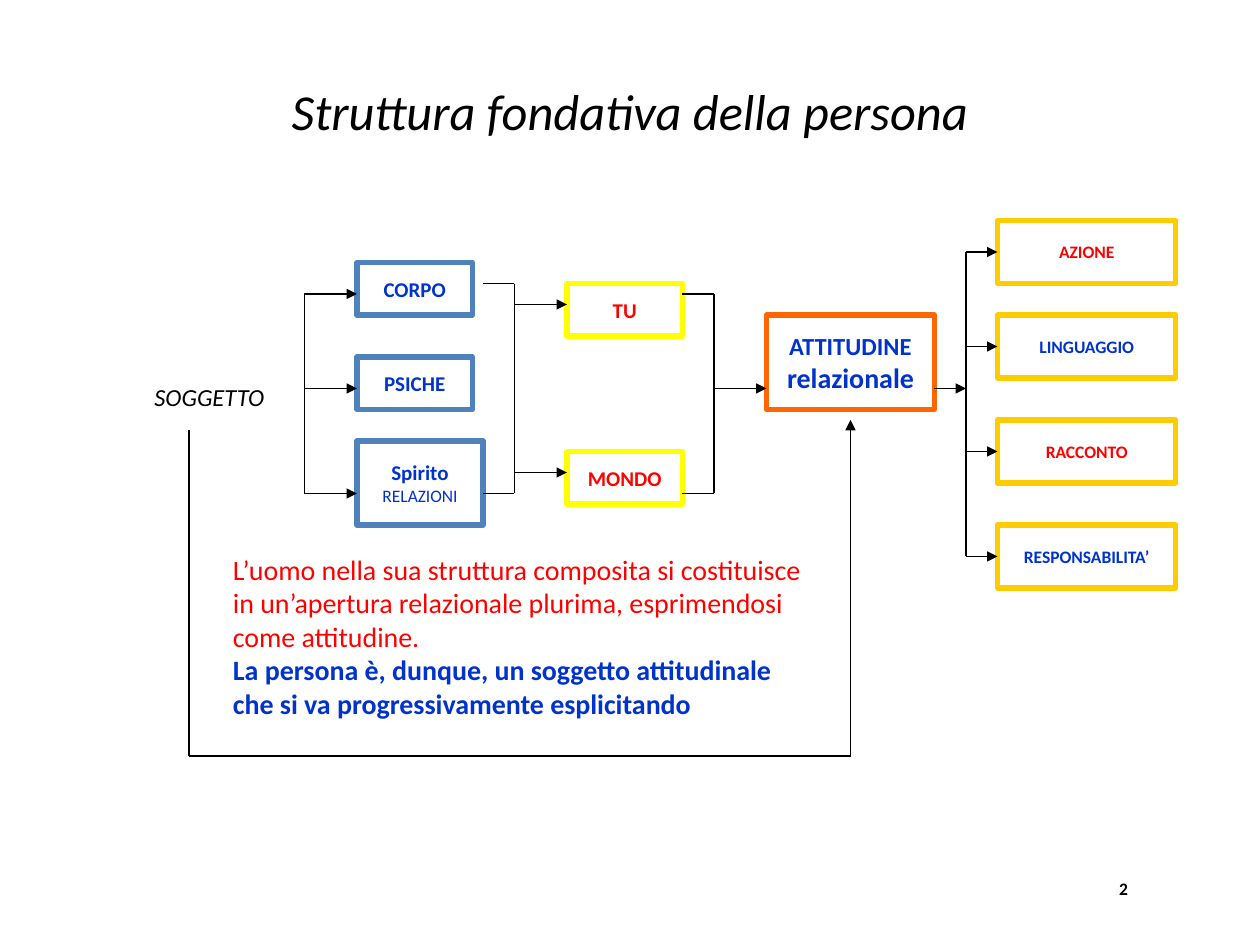
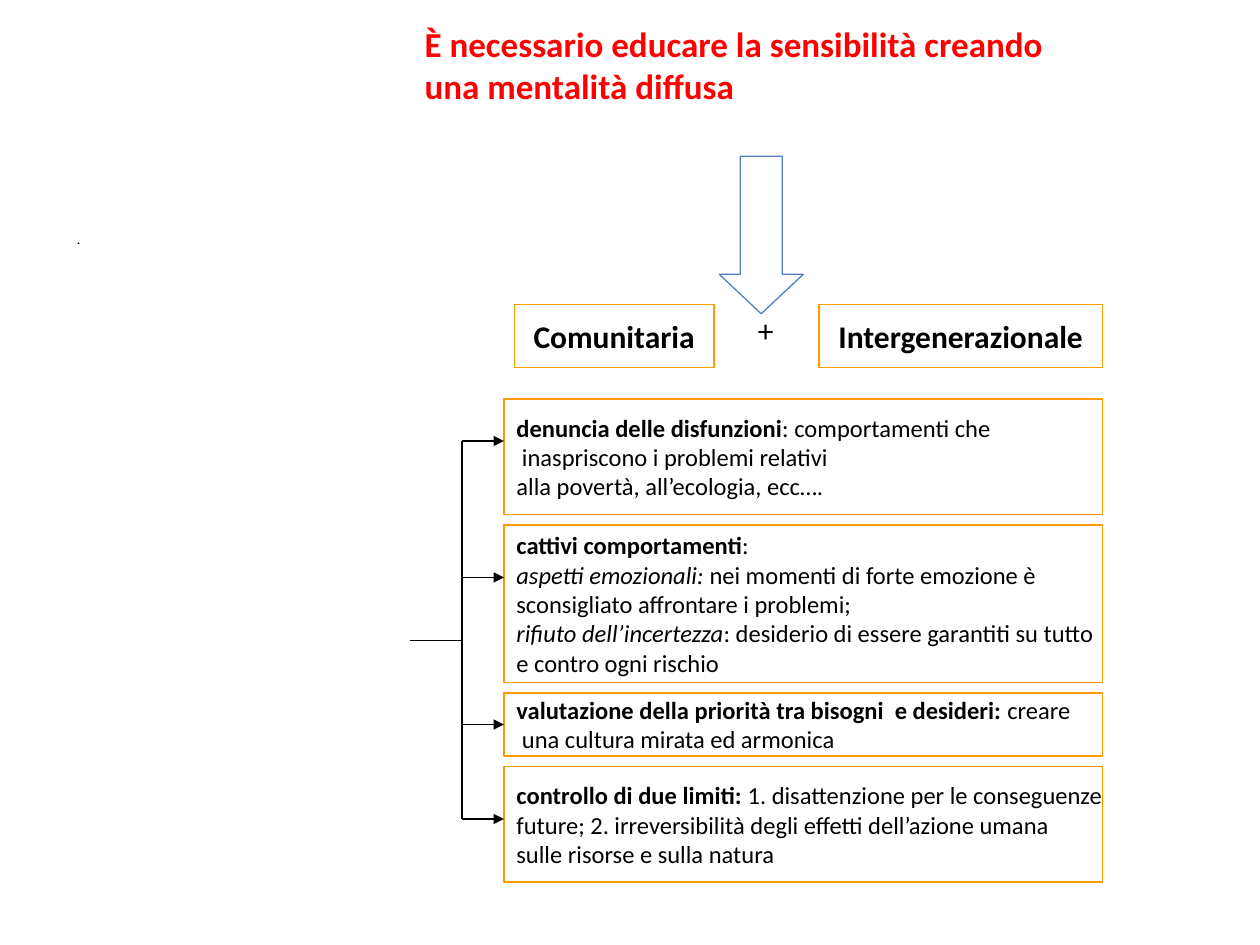
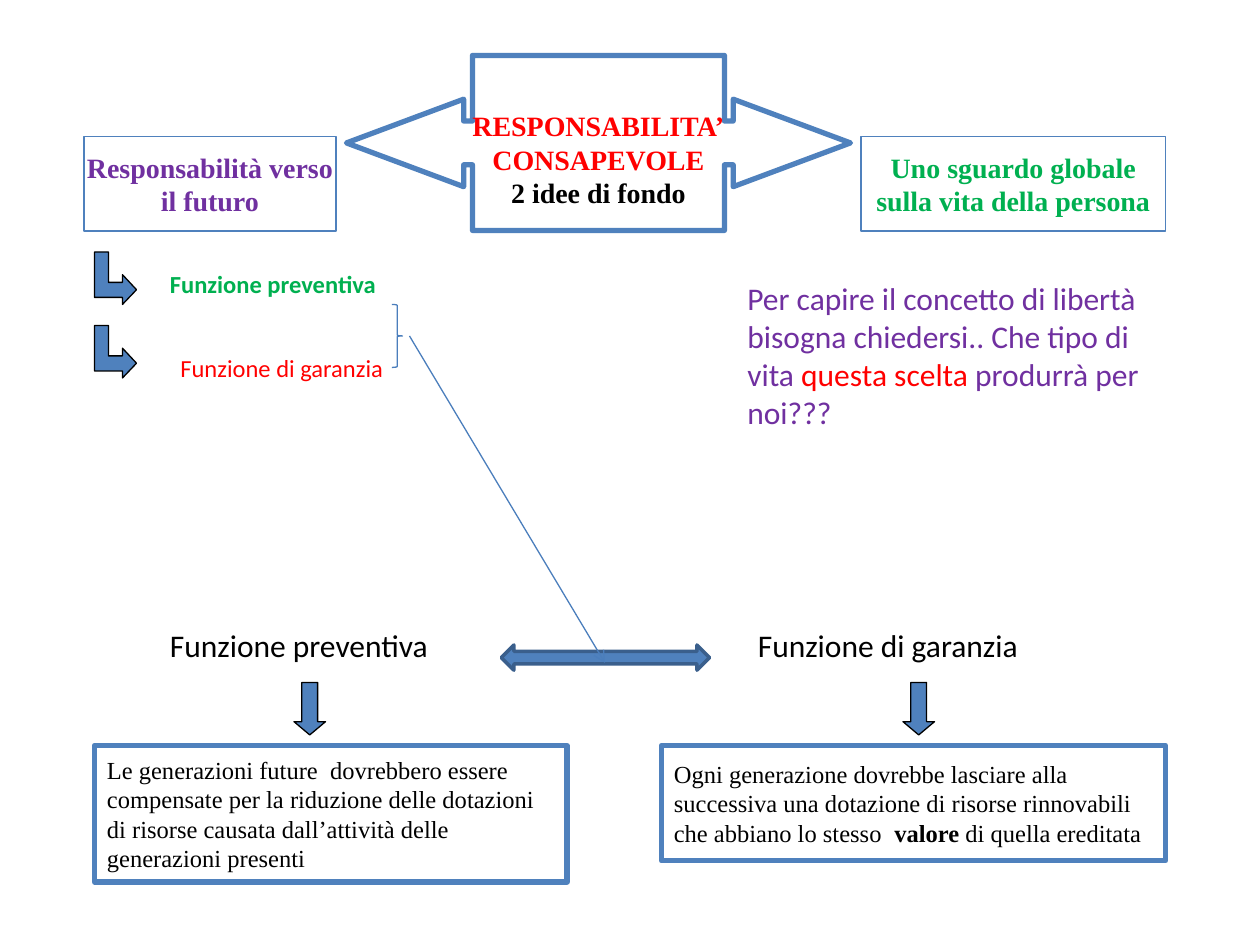
from dataclasses import dataclass, replace
from typing import NamedTuple, Optional

from lxml import etree
from pptx import Presentation
from pptx.dml import color as dml
from pptx.enum import shapes, text
from pptx.oxml import ns
from pptx.util import Pt

BLACK, WHITE, RED = "000000", "FFFFFF", "FF0000"
BLUE, STEEL, STEEL_LINE, STEEL_DARK = "0033CC", "4F81BD", "4B7EBC", "3A5F8C"
YELLOW, GOLD, AMBER, ORANGE = "FFFF00", "FFCC00", "FF9900", "FF6600"
PURPLE, GREEN = "7030A0", "00B050"
SERIF = "Times New Roman"
THIN, THICK = 0.75, 3
LEFT, CENTER = text.PP_ALIGN.LEFT, text.PP_ALIGN.CENTER
PRESET = shapes.MSO_SHAPE


class Area(NamedTuple):
    left: float
    top: float
    width: float
    height: float


class Point(NamedTuple):
    x: float
    y: float


@dataclass(frozen=True)
class Style:
    size: float = 14
    color: str = BLACK
    bold: bool = False
    italic: bool = False
    name: str = "Calibri"


class Span(NamedTuple):
    text: str
    style: Style


@dataclass(frozen=True)
class Box:
    area: Area
    paragraphs: tuple = ()
    line: str = STEEL
    width: float = THIN
    fill: Optional[str] = None
    align: int = CENTER
    preset: int = PRESET.RECTANGLE
    adjustments: tuple = ()
    margin_top: float = 3.6


NORMAL = Style()
BOLD = Style(bold=True)
ITALIC = Style(italic=True)


def rgb(value: str) -> dml.RGBColor:
    return dml.RGBColor.from_string(value)


def points(values) -> list:
    return [Pt(value) for value in values]


def lines(style: Style, *texts: str) -> tuple:
    return tuple((Span(line, style),) for line in texts)


def set_font(font, style: Style) -> None:
    font.name, font.size = style.name, Pt(style.size)
    font.bold, font.italic = style.bold, style.italic
    font.color.rgb = rgb(style.color)


def write(frame, paragraphs: tuple, align=LEFT) -> None:
    for index, spans in enumerate(paragraphs):
        paragraph = frame.add_paragraph() if index else frame.paragraphs[0]
        paragraph.alignment = align
        paragraph.space_before = Pt(0)
        for span in spans:
            run = paragraph.add_run()
            run.text = span.text
            if len(spans) > 1:
                set_font(run.font, span.style)
        if len(spans) == 1:
            set_font(paragraph.font, spans[0].style)


def fill_placeholder(placeholder, area: Area, paragraphs: tuple, align=LEFT,
                     anchor=text.MSO_ANCHOR.TOP) -> None:
    (placeholder.left, placeholder.top,
     placeholder.width, placeholder.height) = points(area)
    frame = placeholder.text_frame
    frame.word_wrap = True
    frame.auto_size = text.MSO_AUTO_SIZE.NONE
    frame.vertical_anchor = anchor
    write(frame, paragraphs, align)


def fill_body(placeholder, area: Area, paragraphs: tuple) -> None:
    fill_placeholder(placeholder, area, paragraphs)
    for paragraph in placeholder.text_frame.paragraphs:
        properties = paragraph._p.get_or_add_pPr()
        properties.set("marL", "0")
        properties.set("indent", "0")
        bullet = etree.Element(ns.qn("a:buNone"))
        default_font = properties.find(ns.qn("a:defRPr"))
        if default_font is None:
            properties.append(bullet)
        else:
            default_font.addprevious(bullet)


def add_text(slide, area: Area, paragraphs: tuple, align=LEFT) -> None:
    frame = slide.shapes.add_textbox(*points(area)).text_frame
    frame.word_wrap = True
    frame.auto_size = text.MSO_AUTO_SIZE.SHAPE_TO_FIT_TEXT
    write(frame, paragraphs, align)


def paint(shape, fill: Optional[str], line: str, width: float) -> None:
    shape.shadow.inherit = False
    if fill:
        shape.fill.solid()
        shape.fill.fore_color.rgb = rgb(fill)
    else:
        shape.fill.background()
    shape.line.color.rgb = rgb(line)
    shape.line.width = Pt(width)


def add_box(slide, box: Box):
    shape = slide.shapes.add_shape(box.preset, *points(box.area))
    for index, value in enumerate(box.adjustments):
        shape.adjustments[index] = value
    paint(shape, box.fill, box.line, box.width)
    if box.paragraphs:
        frame = shape.text_frame
        frame.word_wrap = False
        frame.vertical_anchor = text.MSO_ANCHOR.MIDDLE
        frame.margin_top = Pt(box.margin_top)
        write(frame, box.paragraphs, box.align)
    return shape


def add_line(slide, start: Point, end: Point, head: Optional[str] = None,
             color: str = BLACK):
    connector = slide.shapes.add_connector(
        shapes.MSO_CONNECTOR.STRAIGHT, *points(start + end))
    connector.line.color.rgb = rgb(color)
    connector.line.width = Pt(THIN)
    properties = connector._element.spPr
    if head:
        outline = properties.find(ns.qn("a:ln"))
        etree.SubElement(outline, ns.qn("a:tailEnd"), type=head)
    etree.SubElement(properties, ns.qn("a:effectLst"))
    return connector


def add_path(slide, corners: list, head: Optional[str] = None) -> None:
    last = len(corners) - 2
    for index, (start, end) in enumerate(zip(corners, corners[1:])):
        add_line(slide, Point(*start), Point(*end), head if index == last else None)


def add_arrows(slide, start_x: float, end_x: float, heights: list, targets: list) -> None:
    for y, target in zip(heights, targets):
        arrow = add_line(slide, Point(start_x, y), Point(end_x, y), "triangle")
        if target.top + target.height // 2 == Pt(y):
            arrow.end_connect(target, 1)


def add_branch(slide, trunk_x: float, end_x: float, heights: list, targets: list) -> None:
    add_line(slide, Point(trunk_x, heights[0]), Point(trunk_x, heights[-1]))
    add_arrows(slide, trunk_x, end_x, heights, targets)


def add_bent_arrow(slide, left: float, top: float) -> None:
    outline = [(24, 21.6), (16, 13), (16, 17.4), (8, 17.4), (8, 0),
               (0, 0), (0, 26), (16, 26), (16, 30)]
    corners = [(Pt(left + x), Pt(top + y)) for x, y in outline]
    builder = slide.shapes.build_freeform(*corners[0], scale=1.0)
    builder.add_line_segments(corners[1:], close=True)
    paint(builder.convert_to_shape(), STEEL, BLACK, THIN)


def build_structure(presentation) -> None:
    slide = presentation.slides.add_slide(presentation.slide_layouts[1])
    fill_placeholder(slide.shapes.title, Area(54, 48, 612, 30),
                     lines(Style(28.8, italic=True), "Struttura fondativa della persona"),
                     CENTER, text.MSO_ANCHOR.MIDDLE)
    body = slide.placeholders[1]
    fill_body(body, Area(54, 114, 636, 366), lines(ITALIC, "SOGGETTO"))
    body.text_frame.margin_left = Pt(34.2)
    body.text_frame.margin_top = Pt(104.5)

    blue = Style(12, BLUE, True)
    red = replace(blue, color=RED)
    spirit = lines(blue, "Spirito") + lines(Style(10, BLUE), "RELAZIONI")
    subject_parts = [
        add_box(slide, Box(area, content, STEEL, THICK, WHITE))
        for area, content in (
            (Area(204, 150, 66, 30), lines(blue, "CORPO")),
            (Area(204, 204, 66, 30), lines(blue, "PSICHE")),
            (Area(204, 252, 72, 48), spirit),
        )
    ]
    others = [
        add_box(slide, Box(Area(324, top, 66, 30), lines(red, label), YELLOW, THICK, WHITE))
        for top, label in ((162, "TU"), (258, "MONDO"))
    ]
    attitude = add_box(slide, Box(
        Area(438, 180, 96, 54),
        lines(replace(blue, size=14), "ATTITUDINE") + lines(replace(blue, size=16), "relazionale"),
        ORANGE, THICK, WHITE))
    expressions = [
        add_box(slide, Box(Area(570, top, 102, 36), lines(Style(10, color, True), label),
                           GOLD, THICK, WHITE))
        for top, label, color in ((126, "AZIONE", RED), (180, "LINGUAGGIO", BLUE),
                                  (240, "RACCONTO", RED), (300, "RESPONSABILITA’", BLUE))
    ]

    add_branch(slide, 174, 204, [168, 222, 282], subject_parts)
    add_path(slide, [(276, 162), (294, 162), (294, 282), (276, 282)])
    add_arrows(slide, 294, 324, [174, 270], others)
    add_path(slide, [(390, 168), (408, 168), (408, 282), (390, 282)])
    add_arrows(slide, 408, 438, [222], [attitude])
    add_path(slide, [(108, 246), (108, 432), (486, 432), (486, 240)], "triangle")
    add_line(slide, Point(534, 222), Point(552, 222), "triangle")
    add_branch(slide, 552, 570, [144, 198, 258, 318], expressions)

    add_text(slide, Area(126, 312, 348, 104),
             lines(Style(16, RED),
                   "L’uomo nella sua struttura composita si costituisce in un’apertura "
                   "relazionale plurima, esprimendosi come attitudine.")
             + lines(Style(16, BLUE, True),
                     "La persona è, dunque, un soggetto attitudinale che si va "
                     "progressivamente esplicitando"))
    add_text(slide, Area(630, 498, 24, 19.4), lines(Style(10, bold=True), "2"), CENTER)


def build_sensibility(presentation) -> None:
    slide = presentation.slides.add_slide(presentation.slide_layouts[1])
    fill_placeholder(slide.shapes.title, Area(235.4, 9.4, 385, 55.4),
                     lines(Style(20, RED, True),
                           "È necessario educare la sensibilità creando una mentalità diffusa"))
    fill_body(slide.placeholders[1], Area(36.7, 128.2, 648, 356.4), lines(Style(8), "."))

    heading = Style(18, bold=True)
    for left, width, label in ((294, 114, "Comunitaria"), (468, 162, "Intergenerazionale")):
        add_box(slide, Box(Area(left, 174, width, 36), lines(heading, label), AMBER))
    add_text(slide, Area(426, 174, 24, 36), lines(Style(18), "+"))

    complaint = (
        (Span("denuncia delle disfunzioni", BOLD), Span(": comportamenti che", NORMAL)),
        *lines(NORMAL, " inaspriscono i problemi relativi", "alla povertà, all’ecologia, ecc…."),
    )
    behaviours = (
        (Span("cattivi comportamenti", BOLD), Span(":", NORMAL)),
        (Span("aspetti emozionali: ", ITALIC), Span("nei momenti di forte emozione è", NORMAL)),
        *lines(NORMAL, "sconsigliato affrontare i problemi;"),
        (Span("rifiuto dell’incertezza", ITALIC),
         Span(": desiderio di essere garantiti su tutto", NORMAL)),
        *lines(NORMAL, "e contro ogni rischio"),
    )
    priorities = (
        (Span("valutazione della priorità tra bisogni  e desideri: ", BOLD), Span("creare", NORMAL)),
        *lines(NORMAL, " una cultura mirata ed armonica"),
    )
    limits = (
        (Span("controllo di due limiti: ", BOLD),
         Span("1. disattenzione per le conseguenze", NORMAL)),
        *lines(NORMAL, "future; 2. irreversibilità degli effetti dell’azione umana",
               "sulle risorse e sulla natura"),
    )
    topics = []
    top, gap = 228, 6
    for height, content in ((66, complaint), (90, behaviours), (36, priorities), (66, limits)):
        topics.append(add_box(slide, Box(Area(288, top, 342, height), content, AMBER, align=LEFT)))
        top += height + gap
    add_line(slide, Point(234, 366), Point(264, 366))
    add_branch(slide, 264, 288, [252, 330, 414, 468], topics)
    add_box(slide, Box(Area(411, 89.3, 48, 90), preset=PRESET.DOWN_ARROW,
                       adjustments=(0.5, 0.47)))


def build_responsibility(presentation) -> None:
    slide = presentation.slides.add_slide(presentation.slide_layouts[6])
    serif_bold = Style(16, bold=True, name=SERIF)
    serif = Style(name=SERIF)
    add_box(slide, Box(
        Area(198, 31.7, 288, 100),
        lines(replace(serif_bold, color=RED), "RESPONSABILITA’", "CONSAPEVOLE")
        + lines(serif_bold, "2 idee di fondo"),
        width=THICK, preset=PRESET.LEFT_RIGHT_ARROW_CALLOUT,
        adjustments=(0.25, 0.25, 0.67, 0.5), margin_top=22))
    for left, width, color, labels in (
        (48, 144, PURPLE, ("Responsabilità verso", "il futuro")),
        (492, 174, GREEN, ("Uno sguardo globale", "sulla vita della persona")),
    ):
        add_box(slide, Box(Area(left, 78, width, 54),
                           lines(replace(serif_bold, color=color), *labels)))

    for top in (144, 186):
        add_bent_arrow(slide, 54, top)

    purple = Style(18, PURPLE)
    question = ((
        Span("Per capire il concetto di libertà bisogna chiedersi.. Che tipo di vita ", purple),
        Span("questa scelta", Style(18, RED)),
        Span(" produrrà per noi???", purple),
    ),)
    for area, content in (
        (Area(90, 150, 144, 24), lines(Style(color=GREEN, bold=True), "Funzione preventiva")),
        (Area(96, 198, 144, 24), lines(Style(color=RED), "Funzione di garanzia")),
        (Area(420, 156, 246, 94), question),
        (Area(90, 354, 176, 29), lines(Style(18), "Funzione preventiva")),
        (Area(426, 354, 216, 29), lines(Style(18), "Funzione di garanzia")),
    ):
        add_text(slide, area, content)

    prevention = lines(serif, "Le generazioni future  dovrebbero essere",
                       "compensate per la riduzione delle dotazioni",
                       "di risorse causata dall’attività delle",
                       "generazioni presenti")
    guarantee = lines(serif, "Ogni generazione dovrebbe lasciare alla",
                      "successiva una dotazione di risorse rinnovabili") + ((
        Span("che abbiano lo stesso  ", serif),
        Span("valore", replace(serif, bold=True)),
        Span(" di quella ereditata", serif)),)
    for area, content, arrow_left in (
        (Area(54, 426, 270, 78), prevention, 168),
        (Area(378, 426, 288, 66), guarantee, 516),
    ):
        add_box(slide, Box(area, content, width=THICK, align=LEFT))
        add_box(slide, Box(Area(arrow_left, 390, 18, 30), line=BLACK, fill=STEEL,
                           preset=PRESET.DOWN_ARROW, adjustments=(0.5, 0.42)))

    add_box(slide, Box(Area(286.5, 368.6, 119, 14.4), line=STEEL_DARK, width=2, fill=STEEL,
                       preset=PRESET.LEFT_RIGHT_ARROW))
    add_line(slide, Point(234, 192), Point(345.6, 378.7), "arrow", STEEL_LINE)
    add_box(slide, Box(Area(224, 174, 6, 36), line=STEEL_LINE, preset=PRESET.RIGHT_BRACE))


def main() -> None:
    presentation = Presentation()
    presentation.slide_width, presentation.slide_height = Pt(720), Pt(540)
    build_structure(presentation)
    build_sensibility(presentation)
    build_responsibility(presentation)
    presentation.save("out.pptx")


if __name__ == "__main__":
    main()
